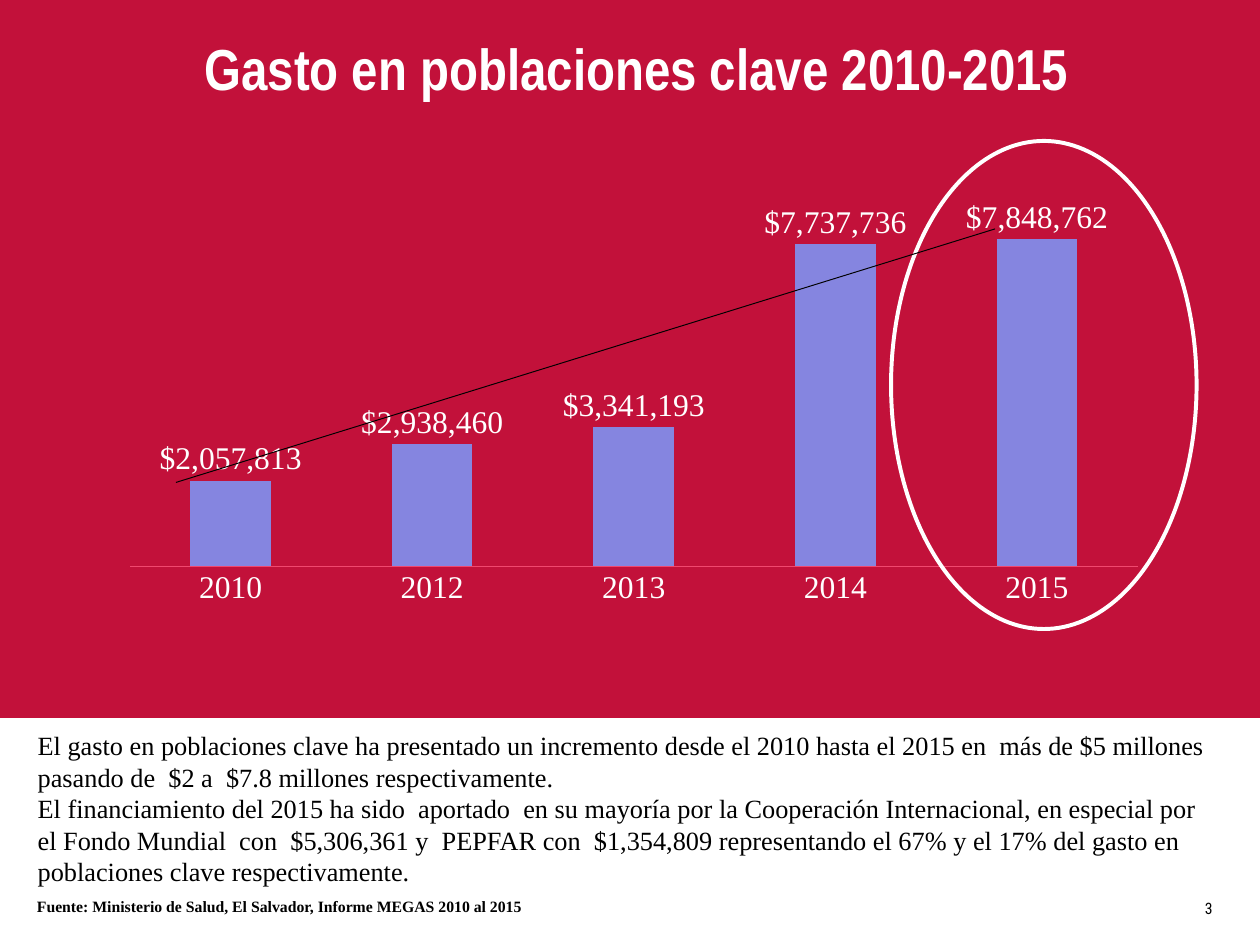
from lxml import etree
from pptx import Presentation
from pptx.chart.data import CategoryChartData
from pptx.dml.color import RGBColor
from pptx.enum import chart as ch, shapes, text
from pptx.oxml import parse_xml
from pptx.oxml.ns import nsdecls, qn
from pptx.util import Inches, Pt

RED, WHITE, BLACK, LILAC, ROSE = "C2113A", "FFFFFF", "000000", "8585E0", "F0486E"
SERIF = "Times New Roman"

TITLE = "Gasto en poblaciones clave 2010-2015"
SPENDING = {"2010": 2057813, "2012": 2938460, "2013": 3341193,
            "2014": 7737736, "2015": 7848762}
COMMENTS = [
    "El gasto en poblaciones clave ha presentado un incremento desde el 2010 hasta "
    "el 2015 en  más de $5 millones pasando de  $2 a  $7.8 millones respectivamente.",
    "El financiamiento del 2015 ha sido  aportado  en su mayoría por la Cooperación "
    "Internacional, en especial por el Fondo Mundial  con  $5,306,361 y  PEPFAR con  "
    "$1,354,809 representando el 67% y el 17% del gasto en poblaciones clave "
    "respectivamente.",
]
SOURCE = "Fuente: Ministerio de Salud, El Salvador, Informe MEGAS 2010 al 2015"
PAGE = "3"

CHART_BOX = (1.15, 1.77, 11.1, 4.73)
PLOT_BOX = (1.37, 2.02, 10.66, 3.97)
AXIS_MAX = 9000000


def color(value):
    return RGBColor.from_string(value)


def box(values):
    return [Inches(value) for value in values]


def style(font, size, name, ink, bold=False):
    font.size, font.name, font.bold = Pt(size), name, bold
    font.color.rgb = color(ink)


def add_text(slide, place, lines, size, name, ink, bold=False, align=None,
             wrap=True, margins=(0.1, 0.05)):
    shape = slide.shapes.add_textbox(*box(place))
    frame = shape.text_frame
    frame.word_wrap = wrap
    frame.margin_left = frame.margin_right = Inches(margins[0])
    frame.margin_top = frame.margin_bottom = Inches(margins[1])
    for index, line in enumerate(lines):
        paragraph = frame.add_paragraph() if index else frame.paragraphs[0]
        paragraph.alignment = align
        run = paragraph.add_run()
        run.text = line
        style(run.font, size, name, ink, bold)
    return shape


def add_shape(slide, kind, place, fill=None, line=None):
    shape = slide.shapes.add_shape(kind, *box(place))
    shape.shadow.inherit = False
    if fill:
        shape.fill.solid()
        shape.fill.fore_color.rgb = color(fill)
    else:
        shape.fill.background()
    if line:
        shape.line.color.rgb = color(line)
        shape.line.width = Pt(3)
    else:
        shape.line.fill.background()


def fix_plot_area(chart):
    """Pin the inner plot area to PLOT_BOX, as fractions of the chart."""
    left, top, width, height = CHART_BOX
    x, y, w, h = PLOT_BOX
    parts = {"x": (x - left) / width, "y": (y - top) / height,
             "w": w / width, "h": h / height}
    sizes = "".join(f'<c:{key} val="{value:.3f}"/>' for key, value in parts.items())
    layout = parse_xml(
        f'<c:layout {nsdecls("c")}><c:manualLayout><c:layoutTarget val="inner"/>'
        f'<c:xMode val="edge"/><c:yMode val="edge"/>{sizes}</c:manualLayout></c:layout>')
    plot_area = chart._chartSpace.chart.plotArea
    for old in plot_area.findall(qn("c:layout")):
        plot_area.remove(old)
    plot_area.insert(0, layout)


def add_spending_chart(slide):
    data = CategoryChartData(number_format='"$"#,##0')
    data.categories = list(SPENDING)
    data.add_series("Series 1", list(SPENDING.values()))
    chart = slide.shapes.add_chart(
        ch.XL_CHART_TYPE.COLUMN_CLUSTERED, *box(CHART_BOX), data).chart
    chart.has_legend = chart.has_title = False
    style(chart.font, 24, SERIF, WHITE)

    years, amounts = chart.category_axis, chart.value_axis
    years.major_tick_mark = ch.XL_TICK_MARK.NONE
    years.format.line.color.rgb = color(ROSE)
    years.format.line.width = Pt(0.75)
    amounts.minimum_scale, amounts.maximum_scale = 0, AXIS_MAX
    amounts.has_major_gridlines = False
    amounts.visible = False

    plot = chart.plots[0]
    plot.vary_by_categories = False
    plot.gap_width, plot.overlap = 150, -25
    fill = plot.series[0].format.fill
    fill.solid()
    fill.fore_color.rgb = color(LILAC)
    plot.has_data_labels = True
    labels = plot.data_labels
    labels.show_value = True
    labels.number_format, labels.number_format_is_linked = '"$"#,##0', False
    labels.position = ch.XL_LABEL_POSITION.OUTSIDE_END
    style(labels.font, 24, SERIF, WHITE)
    fix_plot_area(chart)


def add_trend(slide, start, end):
    line = slide.shapes.add_connector(
        shapes.MSO_CONNECTOR.STRAIGHT, *box(start + end))
    line.line.color.rgb = color(BLACK)
    line.line.width = Pt(0.75)
    etree.SubElement(line._element.spPr, qn("a:effectLst"))


def main():
    presentation = Presentation()
    presentation.slide_width, presentation.slide_height = box((13.32, 9.99))
    slide = presentation.slides.add_slide(presentation.slide_layouts[6])

    source = add_text(slide, (0.3, 9.44, 12.72, 0.55), [SOURCE], 12, SERIF, BLACK,
                      bold=True, margins=(0.09, 0.04))
    source.fill.solid()
    source.fill.fore_color.rgb = color(WHITE)
    add_shape(slide, shapes.MSO_SHAPE.RECTANGLE, (0, 0, 13.32, 7.59), fill=RED)
    add_text(slide, (0.76, 0.3, 11.95, 0.84), [TITLE], 44, "Arial Narrow", WHITE,
             bold=True, align=text.PP_ALIGN.CENTER)
    add_text(slide, (12.64, 9.45, 0.28, 0.3), [PAGE], 12, "Roboto Condensed", BLACK,
             align=text.PP_ALIGN.JUSTIFY, wrap=False)
    add_spending_chart(slide)
    add_shape(slide, shapes.MSO_SHAPE.OVAL, (9.42, 1.49, 3.23, 5.16), line=WHITE)
    add_trend(slide, (1.86, 5.1), (10.52, 2.42))
    add_text(slide, (0.3, 7.66, 12.63, 1.78), COMMENTS, 20, SERIF, BLACK)
    presentation.save("out.pptx")


if __name__ == "__main__":
    main()
